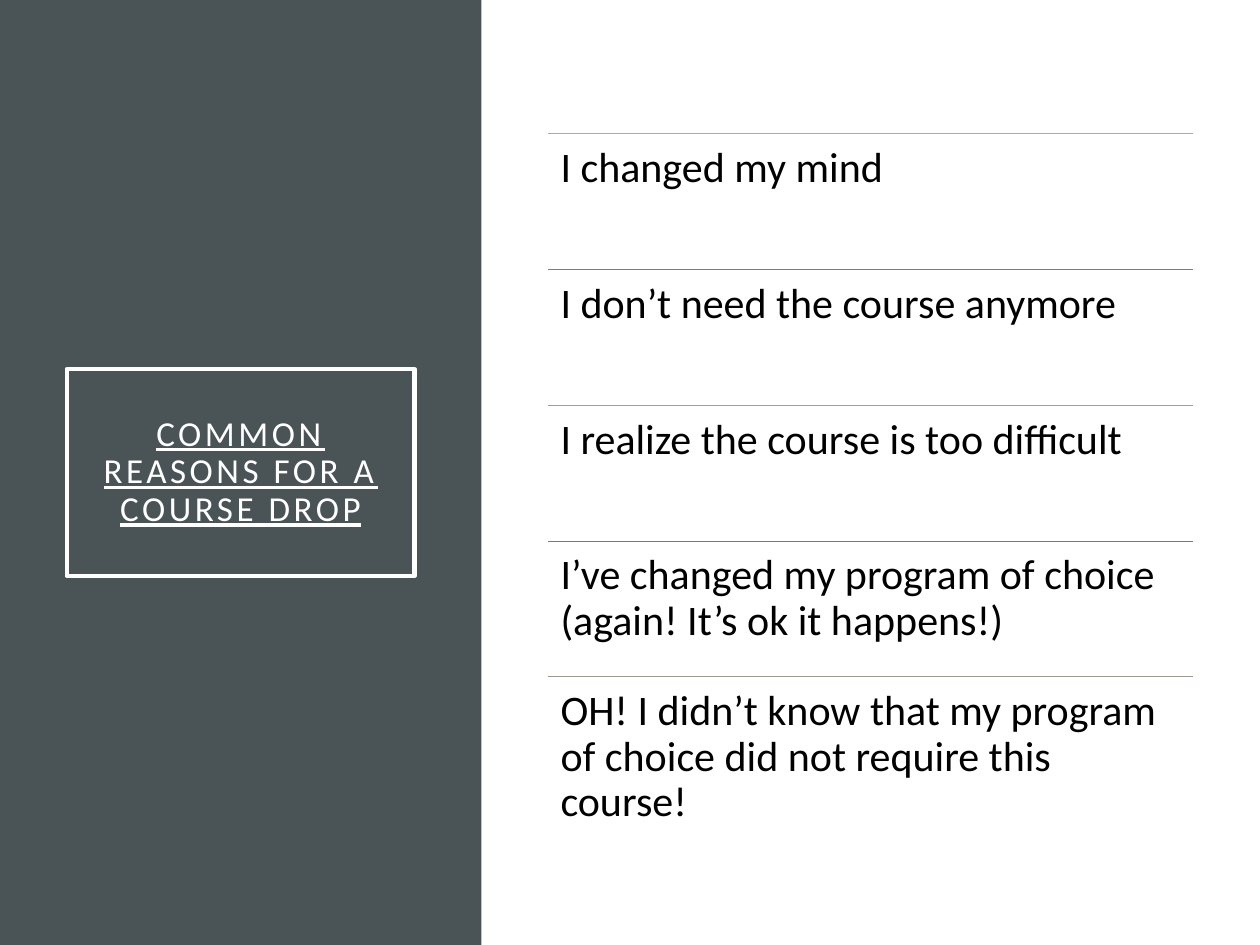
from lxml import etree
from pptx import Presentation
from pptx.dml.color import RGBColor
from pptx.enum.shapes import MSO_CONNECTOR, MSO_SHAPE
from pptx.enum.text import MSO_ANCHOR, PP_ALIGN
from pptx.oxml.ns import qn
from pptx.util import Inches, Pt

RECTANGLE = MSO_SHAPE.RECTANGLE
STRAIGHT = MSO_CONNECTOR.STRAIGHT
TOP, MIDDLE = MSO_ANCHOR.TOP, MSO_ANCHOR.MIDDLE
LEFT, CENTER = PP_ALIGN.LEFT, PP_ALIGN.CENTER

COLORS = {
    "panel": "4A5356",
    "white": "FFFFFF",
    "text": "000000",
    "mist": "9BAFB5",
    "orange": "C96731",
    "sage": "9CA383",
    "umber": "87795D",
    "stone": "A0988C",
}

REASONS = [
    ("mist", "I changed my mind"),
    ("orange", "I don’t need the course anymore"),
    ("sage", "I realize the course is too difficult"),
    ("umber", "I’ve changed my program of choice (again! It’s ok it happens!)"),
    ("stone", "OH! I didn’t know that my program of choice did not require this course!"),
]


def color(name):
    return RGBColor.from_string(COLORS[name])


def write_text(shape, text, size, ink, inset, align=LEFT, anchor=TOP,
               underline=None, tracking=0):
    frame = shape.text_frame
    frame.word_wrap = True
    frame.vertical_anchor = anchor
    frame.margin_left = frame.margin_right = Inches(inset)
    frame.margin_top = frame.margin_bottom = Inches(inset)
    paragraph = frame.paragraphs[0]
    paragraph.alignment = align
    paragraph.line_spacing = 0.9
    run = paragraph.add_run()
    run.text = text
    run.font.name = "Calibri"
    run.font.size = Pt(size)
    run.font.color.rgb = color(ink)
    run.font.underline = underline
    if tracking:
        run.font._element.set("spc", str(tracking * 100))


presentation = Presentation()
presentation.slide_width = Inches(10)
presentation.slide_height = Inches(7.5)
slide = presentation.slides.add_slide(presentation.slide_layouts[6])
shapes = slide.shapes

panel = shapes.add_shape(RECTANGLE, 0, 0, Inches(3.82), presentation.slide_height)
panel.shadow.inherit = False
panel.fill.solid()
panel.fill.fore_color.rgb = color("panel")
panel.line.fill.background()

title = shapes.add_shape(RECTANGLE, Inches(0.53), Inches(2.93), Inches(2.76), Inches(1.64))
title.shadow.inherit = False
title.fill.background()
title.line.color.rgb = color("white")
title.line.width = Pt(2.5)
write_text(title, "COMMON REASONS FOR A COURSE DROP", size=20, ink="white", inset=0.2,
           align=CENTER, anchor=MIDDLE, underline=True, tracking=2)

list_left, list_top = Inches(4.35), Inches(1.06)
list_width, list_height = Inches(5.12), Inches(5.39)
row_height = list_height // len(REASONS)

for row, (rule_color, reason) in enumerate(REASONS):
    top = list_top + row * row_height
    rule = shapes.add_connector(STRAIGHT, list_left, top, list_left + list_width, top)
    rule.line.color.rgb = color(rule_color)
    rule.line.width = Pt(0.5)
    etree.SubElement(rule._element.spPr, qn("a:effectLst"))
    box = shapes.add_textbox(list_left, top, list_width, row_height)
    write_text(box, reason, size=24, ink="text", inset=0.1)

presentation.save("out.pptx")
